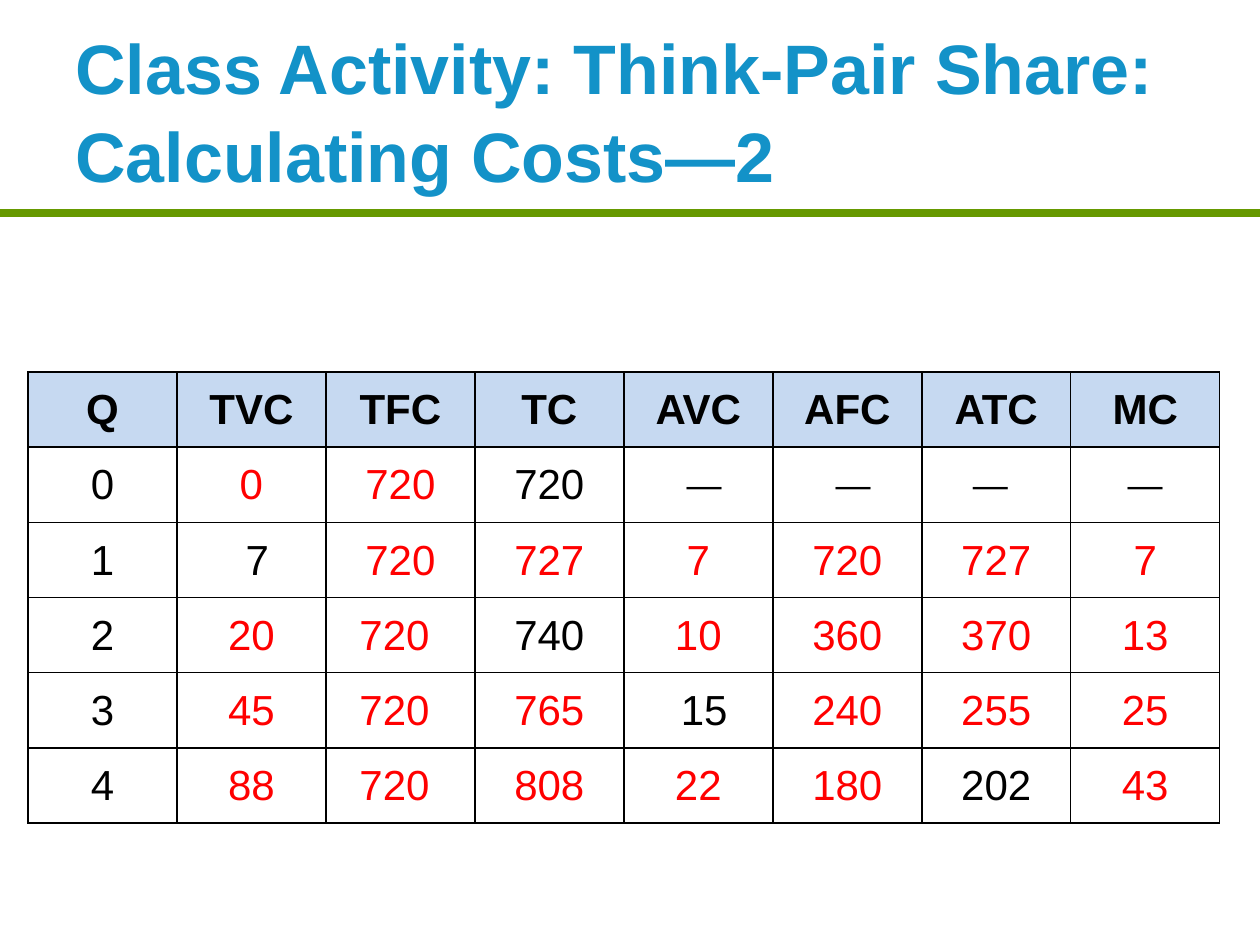
import pptx
import pptx.util
import pptx.dml.color
import pptx.enum.shapes
import pptx.enum.text
import pptx.oxml
import pptx.oxml.ns

Pt = pptx.util.Pt
MIDDLE = pptx.enum.text.MSO_ANCHOR.MIDDLE
BLACK, RED = "000000", "FF0000"


def color(hex_string):
    return pptx.dml.color.RGBColor.from_string(hex_string)


def write(text_frame, text, size, hex_string, bold):
    paragraph = text_frame.paragraphs[0]
    run = paragraph.add_run()
    run.text = text
    font_format = {"name": "Arial", "size": Pt(size), "bold": bold}
    for name, value in font_format.items():
        setattr(run.font, name, value)
    run.font.color.rgb = color(hex_string)
    return paragraph


presentation = pptx.Presentation()
presentation.slide_width, presentation.slide_height = Pt(720), Pt(540)
slide = presentation.slides.add_slide(presentation.slide_layouts[6])

# Green rule under the title
rule = slide.shapes.add_connector(
    pptx.enum.shapes.MSO_CONNECTOR.STRAIGHT, Pt(0), Pt(121.7), Pt(720), Pt(121.7))
rule.line.color.rgb = color("669900")
rule.line.width = Pt(4.5)
rule._element.spPr.append(pptx.oxml.parse_xml(
    f'<a:effectLst {pptx.oxml.ns.nsdecls("a")}/>'))

# Title
title = slide.shapes.add_textbox(Pt(36), Pt(2), Pt(648), Pt(120))
title.text_frame.word_wrap = True
title.text_frame.vertical_anchor = MIDDLE
paragraph = write(title.text_frame,
                  "Class Activity: Think-Pair Share: Calculating Costs—2",
                  40, "1392C8", True)
paragraph.line_spacing = 1.05

# Cost table: worked answers are red, given values black
costs = [
    ["Q", "TVC", "TFC", "TC", "AVC", "AFC", "ATC", "MC"],
    ["0", "0", "720", "720", "—", "—", "—", "—"],
    ["1", "7", "720", "727", "7", "720", "727", "7"],
    ["2", "20", "720", "740", "10", "360", "370", "13"],
    ["3", "45", "720", "765", "15", "240", "255", "25"],
    ["4", "88", "720", "808", "22", "180", "202", "43"],
]
given = {(1, 3), (2, 1), (3, 3), (4, 4), (5, 6)}
indented_left = {(1, 4), (1, 5), (2, 1), (4, 4)}
indented_right = {(1, 6), (3, 2), (4, 2), (5, 2)}
column_width, row_height, margin, indent = 85.14, 42.97, 0.7, 6.7

table = slide.shapes.add_table(
    len(costs), len(costs[0]), Pt(16), Pt(212.6),
    Pt(column_width * len(costs[0])), Pt(row_height * len(costs))).table
for column in table.columns:
    column.width = Pt(column_width)

for row_index, values in enumerate(costs):
    table.rows[row_index].height = Pt(row_height)
    for column_index, value in enumerate(values):
        position = (row_index, column_index)
        header = row_index == 0
        dash = value == "—"
        black = header or dash or column_index == 0 or position in given
        cell = table.cell(*position)
        paragraph = write(cell.text_frame, value, 20 if dash else 24,
                          BLACK if black else RED, header)
        paragraph.alignment = pptx.enum.text.PP_ALIGN.CENTER
        cell_format = {
            "vertical_anchor": MIDDLE,
            "margin_left": Pt(margin + indent * (position in indented_left)),
            "margin_right": Pt(margin + indent * (position in indented_right)),
            "margin_top": Pt(margin),
            "margin_bottom": Pt(0),
        }
        for name, setting in cell_format.items():
            setattr(cell, name, setting)

        # Borders come before the fill in the cell properties
        properties = cell._tc.get_or_add_tcPr()
        for side in ("lnL", "lnR", "lnT", "lnB"):
            properties.append(pptx.oxml.parse_xml(
                f'<a:{side} {pptx.oxml.ns.nsdecls("a")} w="{Pt(1)}"><a:solidFill>'
                f'<a:srgbClr val="{BLACK}"/></a:solidFill></a:{side}>'))
        if header:
            cell.fill.solid()
            cell.fill.fore_color.rgb = color("C6D9F1")
        else:
            cell.fill.background()

presentation.save("out.pptx")
